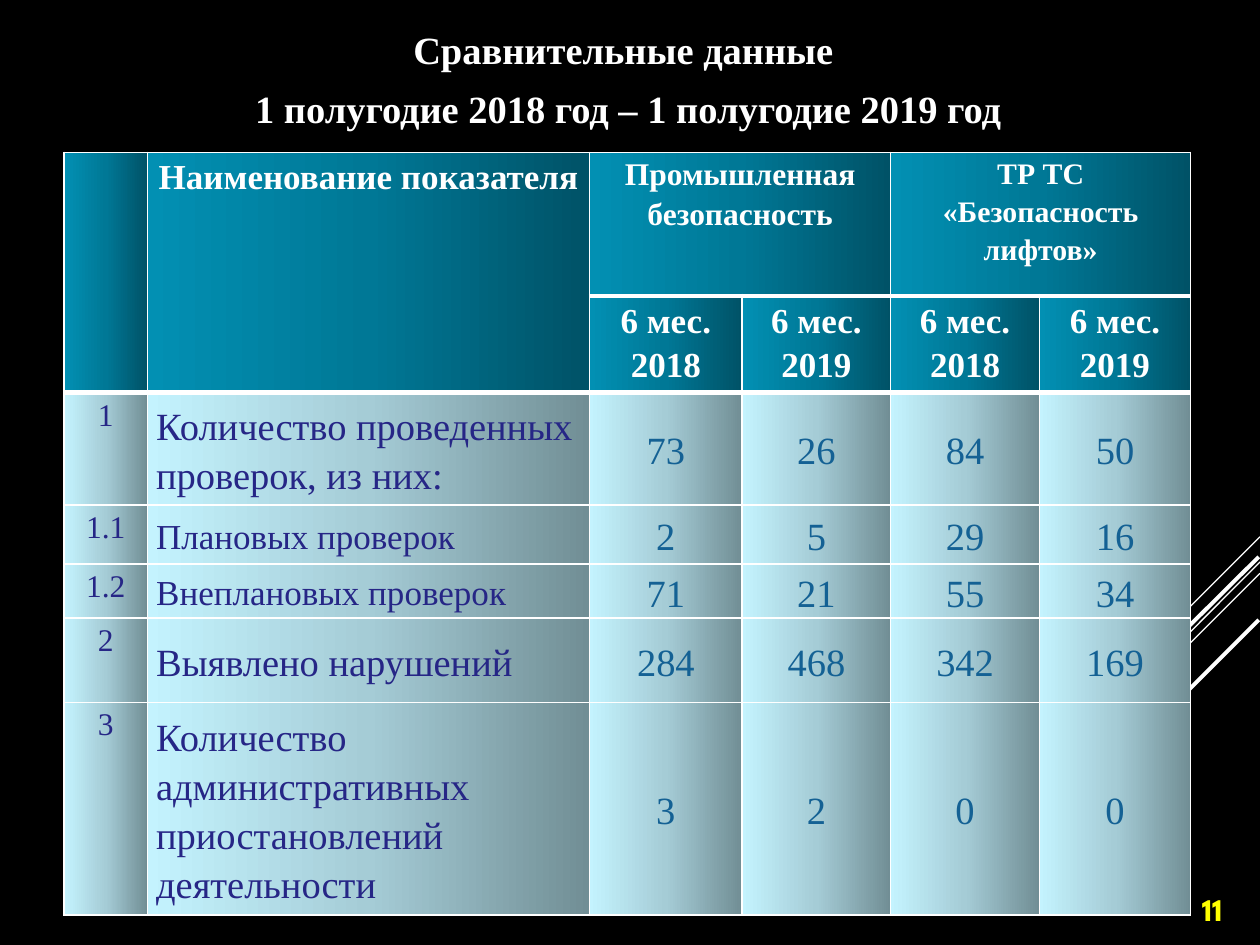
from lxml.etree import SubElement
from pptx import Presentation
from pptx.dml.color import RGBColor
from pptx.enum.shapes import MSO_CONNECTOR, MSO_SHAPE
from pptx.enum.text import MSO_ANCHOR, MSO_AUTO_SIZE, PP_ALIGN
from pptx.oxml.ns import qn
from pptx.util import Inches, Pt

WHITE = "FFFFFF"
NAVY = "262686"
BLUE = "146194"
HEADER_FILL = ("005267", "007896", "0290B3")
BODY_FILL = ("718E95", "A5CCD6", "C4F3FE")

STRIPES = [
    (10, 4.26, 9.17, 5.09, 0.75),
    (10, 4.46, 7.3, 7.17, 0.75),
    (10, 4.55, 8.28, 6.27, 0.75),
    (9.99, 4.42, 8.41, 5.99, 2.25),
    (9.99, 4.92, 8.85, 6.06, 2.25),
]
COLS = [0.66, 3.51, 1.21, 1.18, 1.18, 1.2]
ROWS = [1.14, 0.64, 0.89, 0.47, 0.43, 0.67, 1.63]
MERGES = [(0, 0, 1, 0), (0, 1, 1, 1), (0, 2, 0, 3), (0, 4, 0, 5)]
HEADINGS = [
    (0, 1, "Наименование показателя", 20),
    (0, 2, "Промышленная безопасность", 18),
    (0, 4, "ТР ТС «Безопасность лифтов»", 17),
]
PERIODS = ["6 мес. 2018", "6 мес. 2019"] * 2
INDICATORS = [
    ("1", "Количество проведенных проверок, из них:", 22, (73, 26, 84, 50)),
    ("1.1", "Плановых проверок", 20, (2, 5, 29, 16)),
    ("1.2", "Внеплановых проверок", 20, (71, 21, 55, 34)),
    ("2", "Выявлено нарушений", 22, (284, 468, 342, 169)),
    ("3", "Количество административных приостановлений деятельности", 22,
     (3, 2, 0, 0)),
]


def rgb(value):
    return RGBColor.from_string(value)


class SlideBuilder:
    font = "Times New Roman"

    def __init__(self, prs, background):
        self.s = prs.slides.add_slide(prs.slide_layouts[5])
        self.s.background.fill.solid()
        self.s.background.fill.fore_color.rgb = rgb(background)

    def run(self, p, text, size, color, bold=False, font=None):
        r = p.add_run()
        r.text = text
        r.font.name = font or self.font
        r.font.size = Pt(size)
        r.font.bold = bold
        r.font.color.rgb = rgb(color)

    def title(self, lines, x, y, w, h):
        sp = self.s.shapes.title
        sp.left, sp.top, sp.width, sp.height = map(Inches, (x, y, w, h))
        tf = sp.text_frame
        tf.word_wrap = True
        tf.auto_size = MSO_AUTO_SIZE.SHAPE_TO_FIT_TEXT
        tf.vertical_anchor = MSO_ANCHOR.MIDDLE
        for i, line in enumerate(lines):
            p = tf.add_paragraph() if i else tf.paragraphs[0]
            p.alignment = PP_ALIGN.CENTER
            p.line_spacing = 1.05
            p.space_before = Pt(6 if i else 0)
            self.run(p, line, 22, WHITE, bold=True)

    def line(self, x1, y1, x2, y2, width):
        cxn = self.s.shapes.add_connector(
            MSO_CONNECTOR.STRAIGHT, *map(Inches, (x1, y1, x2, y2)))
        cxn.line.color.rgb = rgb(WHITE)
        cxn.line.width = Pt(width)
        SubElement(cxn._element.spPr, qn("a:effectLst"))

    def table(self, x, y, cols, rows, merges):
        tbl = self.s.shapes.add_table(
            len(rows), len(cols),
            *map(Inches, (x, y, sum(cols), sum(rows)))).table
        tbl.first_row = tbl.horz_banding = False
        for col, width in zip(tbl.columns, cols):
            col.width = Inches(width)
        for row, height in zip(tbl.rows, rows):
            row.height = Inches(height)
        for r1, c1, r2, c2 in merges:
            tbl.cell(r1, c1).merge(tbl.cell(r2, c2))
        return tbl

    def cell_style(self, cell, fill, top, bottom):
        cell.margin_left = cell.margin_right = Inches(0.07)
        cell.margin_top = cell.margin_bottom = 0
        tcPr = cell._tc.get_or_add_tcPr()
        for side, width in zip("LRTB", (1, 1, top, bottom)):
            ln = SubElement(tcPr, qn(f"a:ln{side}"), w=str(Pt(width)))
            solid = SubElement(ln, qn("a:solidFill"))
            SubElement(solid, qn("a:srgbClr"), val=WHITE)
        grad = SubElement(tcPr, qn("a:gradFill"), rotWithShape="1")
        stops = SubElement(grad, qn("a:gsLst"))
        for i, color in enumerate(fill):
            gs = SubElement(stops, qn("a:gs"), pos=str(i * 50000))
            SubElement(gs, qn("a:srgbClr"), val=color)
        SubElement(grad, qn("a:lin"), ang="10800000", scaled="1")

    def cell_text(self, cell, text, size, color, bold=False,
                  align=PP_ALIGN.CENTER, anchor=MSO_ANCHOR.TOP):
        cell.vertical_anchor = anchor
        p = cell.text_frame.paragraphs[0]
        p.alignment = align
        p.line_spacing = 1.15
        self.run(p, text, size, color, bold)

    def page_number(self, text, x, y, w, h):
        sp = self.s.shapes.add_shape(
            MSO_SHAPE.OVAL, *map(Inches, (x, y, w, h)))
        sp.shadow.inherit = False
        sp.fill.background()
        sp.line.fill.background()
        tf = sp.text_frame
        tf.vertical_anchor = MSO_ANCHOR.MIDDLE
        p = tf.paragraphs[0]
        p.alignment = PP_ALIGN.CENTER
        self.run(p, text, 18, "FFFF00", bold=True, font="League Spartan")


def main():
    prs = Presentation()
    prs.slide_width, prs.slide_height = Inches(10), Inches(7.5)
    b = SlideBuilder(prs, "000000")
    for stripe in STRIPES:
        b.line(*stripe)
    b.title(["Сравнительные данные ",
             "1 полугодие 2018 год – 1 полугодие 2019 год"],
            -0.03, 0.15, 10.03, 0.93)

    tbl = b.table(0.51, 1.21, COLS, ROWS, MERGES)
    for i in range(len(ROWS)):
        for j in range(len(COLS)):
            cell = tbl.cell(i, j)
            if not cell.is_spanned:
                b.cell_style(cell, HEADER_FILL if i < 2 else BODY_FILL,
                             top=3 if i in (1, 2) else 1,
                             bottom=3 if i < 2 else 1)
    for i, j, text, size in HEADINGS:
        b.cell_text(tbl.cell(i, j), text, size, WHITE, bold=True)
    for j, period in enumerate(PERIODS, 2):
        b.cell_text(tbl.cell(1, j), period, 20, WHITE, bold=True)
    for i, (number, name, size, values) in enumerate(INDICATORS, 2):
        b.cell_text(tbl.cell(i, 0), number, 18, NAVY)
        b.cell_text(tbl.cell(i, 1), name, size, NAVY,
                    align=PP_ALIGN.LEFT, anchor=MSO_ANCHOR.MIDDLE)
        for j, value in enumerate(values, 2):
            b.cell_text(tbl.cell(i, j), str(value), 22, BLUE,
                        anchor=MSO_ANCHOR.MIDDLE)

    b.page_number("11", 9.24, 6.94, 0.76, 0.55)
    prs.save("out.pptx")


if __name__ == "__main__":
    main()
